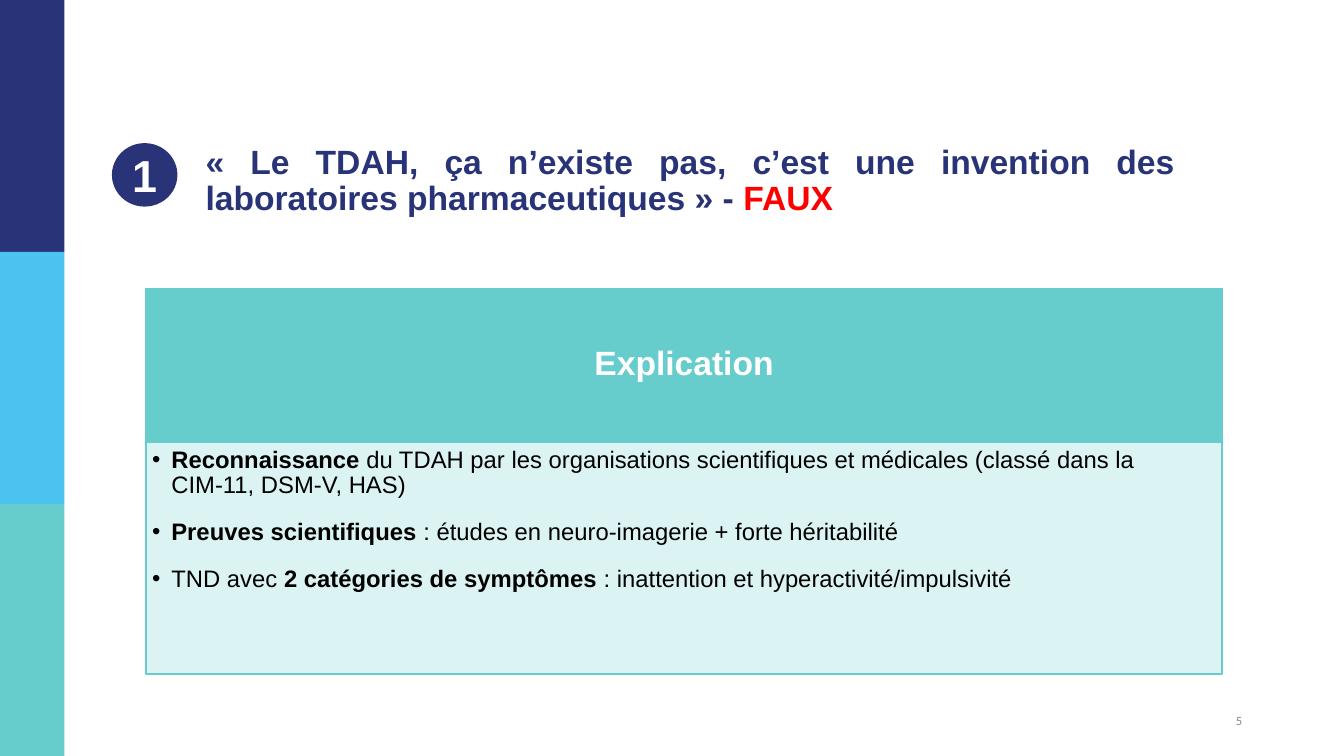
from lxml import etree
from pptx import Presentation
from pptx.dml.color import RGBColor
from pptx.enum.shapes import MSO_SHAPE
from pptx.enum.text import MSO_ANCHOR, PP_ALIGN
from pptx.oxml.ns import qn
from pptx.util import Inches, Pt

RECTANGLE, OVAL = MSO_SHAPE.RECTANGLE, MSO_SHAPE.OVAL
TOP, MIDDLE = MSO_ANCHOR.TOP, MSO_ANCHOR.MIDDLE
LEFT, CENTER, RIGHT, JUSTIFY = (
    PP_ALIGN.LEFT, PP_ALIGN.CENTER, PP_ALIGN.RIGHT, PP_ALIGN.JUSTIFY)

NAVY, SKY, TEAL, PALE_TEAL = "293377", "4CC2F1", "67CCCC", "D9F2F2"
WHITE, BLACK, RED, GREY = "FFFFFF", "000000", "FF0000", "888888"

# Each run is (text, bold, colour).
CLAIM = [
    ("« Le TDAH, ça n’existe pas, c’est une invention des "
     "laboratoires pharmaceutiques » - ", True, NAVY),
    ("FAUX", True, RED),
]
REASONS = [
    [("Reconnaissance", True, BLACK),
     (" du TDAH par les organisations scientifiques et médicales "
      "(classé dans la CIM-11, DSM-V, HAS)", False, BLACK)],
    [("Preuves scientifiques ", True, BLACK),
     (": études en neuro-imagerie + forte héritabilité", False, BLACK)],
    [("TND avec ", False, BLACK),
     ("2 catégories de symptômes ", True, BLACK),
     (": inattention et hyperactivité/impulsivité", False, BLACK)],
]
BANDS = [NAVY, SKY, TEAL]
BAND_WIDTH, BAND_HEIGHT = 0.64, 2.5
CARD_LEFT, CARD_WIDTH = 1.45, 10.67
HEADER_TOP, HEADER_HEIGHT, BODY_HEIGHT = 2.86, 1.52, 2.31
BULLET_INDENT = 0.19


def rgb(value):
    return RGBColor.from_string(value)


def add_panel(page, kind, place, fill, line=None, line_width=1):
    panel = page.shapes.add_shape(kind, *map(Inches, place))
    panel.shadow.inherit = False
    panel.fill.solid()
    panel.fill.fore_color.rgb = rgb(fill)
    if line:
        panel.line.color.rgb = rgb(line)
        panel.line.width = Pt(line_width)
    else:
        panel.line.fill.background()
    return panel


def set_opacity(panel, percent):
    color = panel.fill._xPr.find(qn("a:solidFill"))[0]
    etree.SubElement(color, qn("a:alpha"), val=str(percent * 1000))


def add_bullet(para):
    properties = para._p.get_or_add_pPr()
    properties.set("marL", str(Inches(BULLET_INDENT)))
    properties.set("indent", str(-Inches(BULLET_INDENT)))
    etree.SubElement(properties, qn("a:buFont"), typeface="Arial")
    etree.SubElement(properties, qn("a:buChar"), char="•")


def write(box, paragraphs, size, align, anchor=MIDDLE, font="Arial",
          margins=(0.1, 0.05, 0.1, 0.05), spacing=1.0, gap=0, bullets=False):
    """Fill a box; margins run left, top, right, bottom and gap is in points."""
    frame = box.text_frame
    frame.word_wrap = True
    frame.vertical_anchor = anchor
    (frame.margin_left, frame.margin_top,
     frame.margin_right, frame.margin_bottom) = map(Inches, margins)
    for index, runs in enumerate(paragraphs):
        para = frame.add_paragraph() if index else frame.paragraphs[0]
        if bullets:
            add_bullet(para)
        para.alignment = align
        para.line_spacing = spacing
        if index:
            para.space_before = Pt(gap)
        para.font.name = font
        para.font.size = Pt(size)
        for text, bold, color in runs:
            span = para.add_run()
            span.text = text
            span.font.bold = bold
            span.font.color.rgb = rgb(color)


def main():
    deck = Presentation()
    deck.slide_width, deck.slide_height = Inches(13.33), Inches(7.5)
    page = deck.slides.add_slide(deck.slide_layouts[6])

    for index, color in enumerate(BANDS):
        add_panel(page, RECTANGLE,
                  (0, index * BAND_HEIGHT, BAND_WIDTH, BAND_HEIGHT), color)

    badge = add_panel(page, OVAL, (1.11, 1.42, 0.65, 0.63), NAVY)
    write(badge, [[("1", True, WHITE)]], 32, CENTER)

    claim = page.shapes.add_textbox(*map(Inches, (1.94, 1.34, 9.81, 0.63)))
    write(claim, [CLAIM], 24, JUSTIFY, TOP, margins=(0.1,) * 4, spacing=0.9)

    number = page.shapes.add_textbox(*map(Inches, (9.42, 6.95, 3, 0.4)))
    write(number, [[("5", False, GREY)]], 9, RIGHT, font="Calibri")

    header = add_panel(page, RECTANGLE,
                       (CARD_LEFT, HEADER_TOP, CARD_WIDTH, HEADER_HEIGHT),
                       TEAL, TEAL)
    write(header, [[("Explication", True, WHITE)]], 24, CENTER,
          margins=(0.19, 0.11, 0.19, 0.11), spacing=0.9)

    body = add_panel(page, RECTANGLE,
                     (CARD_LEFT, HEADER_TOP + HEADER_HEIGHT,
                      CARD_WIDTH, BODY_HEIGHT), PALE_TEAL, TEAL, 1.5)
    set_opacity(body, 90)
    write(body, REASONS, 17, LEFT, TOP, margins=(0.06, 0.06, 0.08, 0.09),
          spacing=0.9, gap=15, bullets=True)

    deck.save("out.pptx")


if __name__ == "__main__":
    main()
